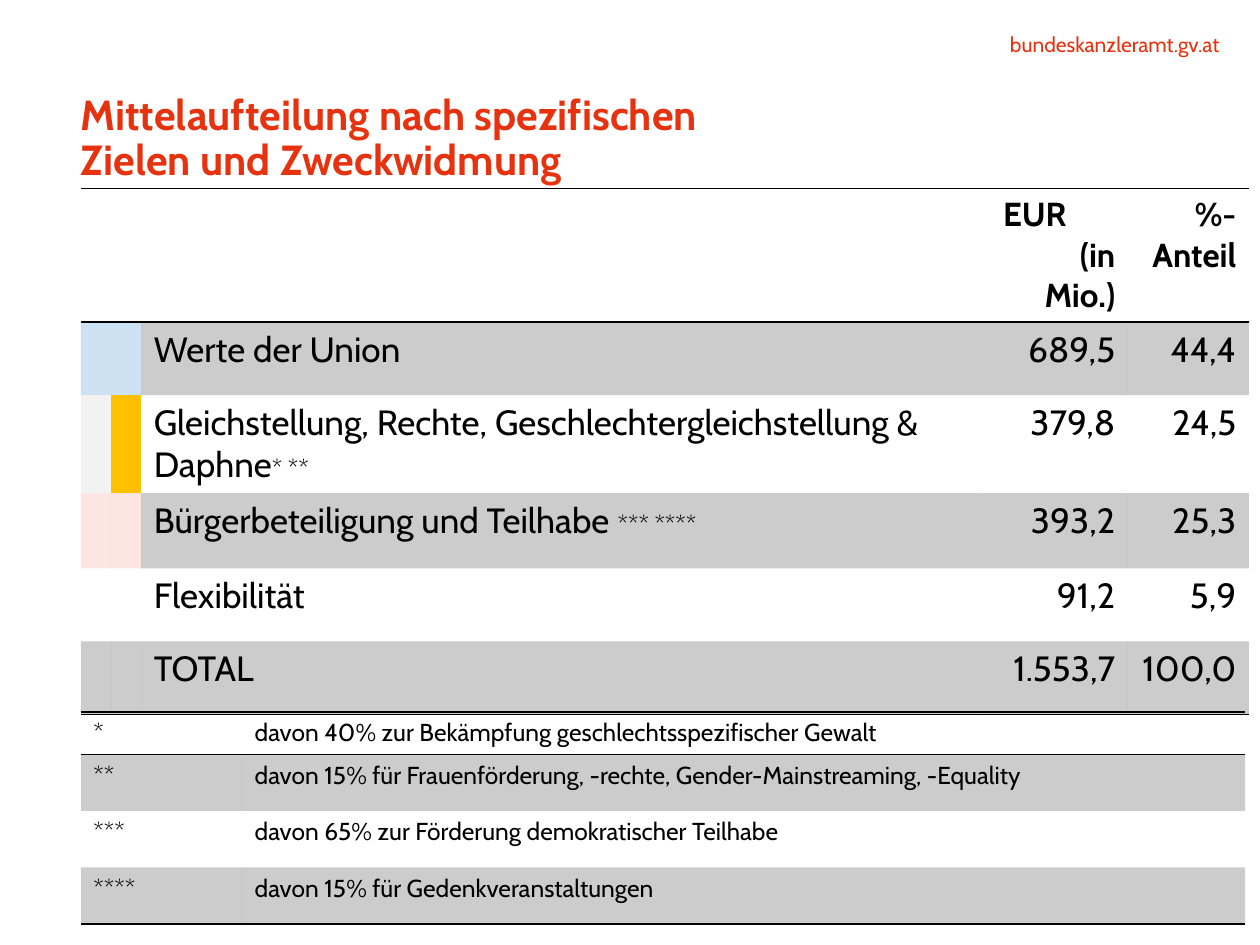
from lxml import etree
from pptx import Presentation
from pptx.dml.color import RGBColor
from pptx.enum.text import MSO_AUTO_SIZE, PP_ALIGN
from pptx.oxml.ns import qn
from pptx.util import Cm, Pt

LEFT, RIGHT = PP_ALIGN.LEFT, PP_ALIGN.RIGHT
FONT = "Cabin"
RED = RGBColor(0xE6, 0x32, 0x0F)
BLACK = RGBColor(0x00, 0x00, 0x00)
BLUE = RGBColor(0x00, 0x70, 0xC0)
PALE = RGBColor(0xF2, 0xF2, 0xF2)
YELLOW = RGBColor(0xFF, 0xC0, 0x00)
SALMON = RGBColor(0xF5, 0x80, 0x6A)
PLAIN_STYLE = "{2D5ABB26-0587-4C30-8999-92F81FD0307C}"

GOALS = [
    ("Werte der Union", "", "689,5", "44,4", (BLUE, BLUE)),
    ("Gleichstellung, Rechte, Geschlechtergleichstellung & Daphne", "* **",
     "379,8", "24,5", (PALE, YELLOW)),
    ("Bürgerbeteiligung und Teilhabe ", "*** ****", "393,2", "25,3", (SALMON, SALMON)),
    ("Flexibilität", "", "91,2", "5,9", None),
    ("TOTAL", "", "1.553,7", "100,0", None),
]
FOOTNOTES = [
    "davon 40% zur Bekämpfung geschlechtsspezifischer Gewalt",
    "davon 15% für Frauenförderung, -rechte, Gender-Mainstreaming, -Equality",
    "davon 65% zur Förderung demokratischer Teilhabe",
    "davon 15% für Gedenkveranstaltungen",
]


def write(paragraph, text, size=20, color=BLACK, bold=False, align=LEFT):
    """Append formatted text to a paragraph, with a line break at each newline."""
    paragraph.alignment = align
    for number, line in enumerate(text.split("\n")):
        if number:
            paragraph.add_line_break()
        run = paragraph.add_run()
        run.text = line
        run.font.name = FONT
        run.font.size = Pt(size)
        run.font.bold = bold
        run.font.color.rgb = color


def add_text(slide, left, top, width, height, text, wrap=True, line_spacing=None, **style):
    """Add a text box without insets."""
    box = slide.shapes.add_textbox(Cm(left), Cm(top), Cm(width), Cm(height))
    frame = box.text_frame
    frame.margin_left = frame.margin_right = frame.margin_top = frame.margin_bottom = 0
    frame.auto_size = MSO_AUTO_SIZE.NONE
    frame.word_wrap = wrap
    paragraph = frame.paragraphs[0]
    if line_spacing:
        paragraph.line_spacing = Pt(line_spacing)
    write(paragraph, text, **style)


def add_plain_table(slide, left, top, height, widths, heights):
    """Add a table without style or grid."""
    frame = slide.shapes.add_table(len(heights), len(widths), Cm(left), Cm(top),
                                   Cm(sum(widths)), Cm(height))
    table = frame.table
    table.first_row = table.horz_banding = False
    table._tbl.tblPr.find(qn("a:tableStyleId")).text = PLAIN_STYLE
    for column, width in zip(table.columns, widths):
        column.width = Cm(width)
    for row, row_height in zip(table.rows, heights):
        row.height = Cm(row_height)
    frame.height = Cm(height)
    return table


def fill_cell(cell, color, alpha=None):
    """Fill a cell, with opacity in percent if given."""
    cell.fill.solid()
    cell.fill.fore_color.rgb = color
    if alpha:
        srgb = cell._tc.tcPr.find(".//" + qn("a:srgbClr"))
        etree.SubElement(srgb, qn("a:alpha")).set("val", str(alpha * 1000))


def rule_row(row, *sides):
    """Draw black lines on the given sides of a row, top before bottom."""
    for cell in row.cells:
        properties = cell._tc.get_or_add_tcPr()
        for position, side in enumerate(sides):
            line = etree.Element(qn("a:ln" + side), w=str(Pt(1)))
            solid = etree.SubElement(line, qn("a:solidFill"))
            etree.SubElement(solid, qn("a:srgbClr")).set("val", str(BLACK))
            properties.insert(position, line)


def shade_rows(table, banded):
    """Shade the banded rows grey and clear the others."""
    for number, row in enumerate(table.rows):
        for cell in row.cells:
            if number in banded:
                fill_cell(cell, BLACK, alpha=20)
            else:
                cell.fill.background()


def add_goals(slide):
    """Add the table of goals with amounts and shares."""
    table = add_plain_table(slide, 1.63, 3.8, 9.78, [0.58, 0.58, 16.94, 2.95, 2.44],
                            [1.45, 1.47, 0.89, 1.52, 1.47, 1.47])
    shade_rows(table, (1, 3, 5))
    amount_head = table.cell(0, 3).text_frame
    write(amount_head.paragraphs[0], "EUR", size=19, bold=True)
    amount_head.paragraphs[0]._p.get_or_add_pPr().set("marL", str(Cm(0.18)))
    write(amount_head.add_paragraph(), "(in\nMio.)", size=19, bold=True, align=RIGHT)
    write(table.cell(0, 4).text_frame.paragraphs[0], "%-Anteil", size=19, bold=True,
          align=RIGHT)
    for number, (goal, marks, amount, share, colors) in enumerate(GOALS, 1):
        for column, color in enumerate(colors or ()):
            fill_cell(table.cell(number, column), color)
        label = table.cell(number, 2).text_frame.paragraphs[0]
        write(label, goal)
        if marks:
            write(label, marks, size=14)
        for column, value in ((3, amount), (4, share)):
            write(table.cell(number, column).text_frame.paragraphs[0], value, align=RIGHT)
    rule_row(table.rows[0], "T", "B")
    rule_row(table.rows[5], "B")


def add_footnotes(slide):
    """Add the table that explains the asterisks."""
    table = add_plain_table(slide, 1.63, 14.35, 4.24, [3.25, 20.22],
                            [0.81, 1.14, 1.14, 1.14])
    shade_rows(table, (1, 3))
    for number, note in enumerate(FOOTNOTES):
        for column, text in enumerate(("*" * (number + 1), note)):
            write(table.cell(number, column).text_frame.paragraphs[0], text, size=14)
    rule_row(table.rows[0], "T", "B")
    rule_row(table.rows[3], "B")


def main():
    """Build the slide and save it."""
    deck = Presentation()
    deck.slide_width, deck.slide_height = Cm(25.4), Cm(19.05)
    slide = deck.slides.add_slide(deck.slide_layouts[6])
    add_text(slide, 18.47, 0.64, 6.12, 0.51, "bundeskanzleramt.gv.at",
             size=12, color=RED, align=RIGHT)
    add_text(slide, 1.63, 1.88, 22.56, 2.31,
             "Mittelaufteilung nach spezifischen\nZielen und Zweckwidmung",
             wrap=False, line_spacing=26, size=24, color=RED, bold=True)
    add_goals(slide)
    add_footnotes(slide)
    deck.save("out.pptx")


if __name__ == "__main__":
    main()
